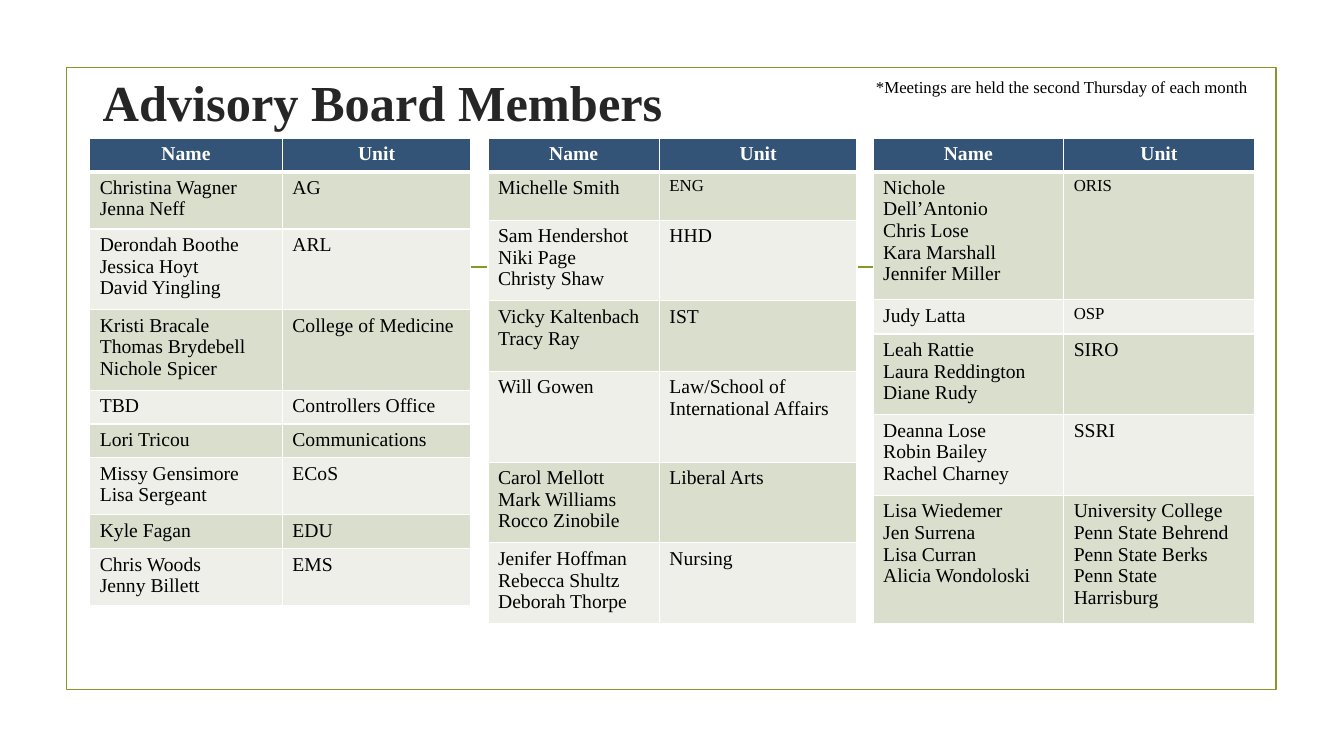
from lxml.etree import SubElement
from pptx import Presentation
from pptx.dml.color import RGBColor
from pptx.enum.shapes import MSO_CONNECTOR, MSO_SHAPE
from pptx.enum.text import MSO_ANCHOR, PP_ALIGN
from pptx.oxml.ns import qn
from pptx.util import Inches, Pt

FONT = "Times New Roman"
GREEN = RGBColor(0x83, 0x99, 0x2A)
NAVY = RGBColor(0x33, 0x54, 0x76)
BANDS = [RGBColor(0xED, 0xEF, 0xE8), RGBColor(0xD9, 0xDE, 0xCD)]
WHITE = RGBColor(0xFF, 0xFF, 0xFF)
BLACK = RGBColor(0, 0, 0)
CHARCOAL = RGBColor(0x26, 0x26, 0x26)

TITLE = "Advisory Board Members"
NOTE = "*Meetings are held the second Thursday of each month"
HEADINGS = (["Name"], ["Unit"])
SMALL_UNITS = {"ENG", "ORIS", "OSP"}
TABLE_TOP = 1.37

# Each member row: height, names, units
TABLES = [
    {"left": 0.89, "cols": (1.91, 1.87), "header": 0.31, "rows": [
        (0.53, ["Christina Wagner", "Jenna Neff"], ["AG"]),
        (0.75, ["Derondah Boothe", "Jessica Hoyt", "David Yingling"], ["ARL"]),
        (0.75, ["Kristi Bracale", "Thomas Brydebell", "Nichole Spicer"],
         ["College of Medicine"]),
        (0.33, ["TBD"], ["Controllers Office"]),
        (0.33, ["Lori Tricou"], ["Communications"]),
        (0.53, ["Missy Gensimore", "Lisa Sergeant"], ["ECoS"]),
        (0.32, ["Kyle Fagan"], ["EDU"]),
        (0.53, ["Chris Woods", "Jenny Billett"], ["EMS"]),
    ]},
    {"left": 4.84, "cols": (1.7, 1.96), "header": 0.31, "rows": [
        (0.48, ["Michelle Smith"], ["ENG"]),
        (0.75, ["Sam Hendershot", "Niki Page", "Christy Shaw"], ["HHD"]),
        (0.7, ["Vicky Kaltenbach", "Tracy Ray"], ["IST"]),
        (0.9, ["Will Gowen"], ["Law/School of International Affairs"]),
        (0.75, ["Carol Mellott", "Mark Williams", "Rocco Zinobile"],
         ["Liberal Arts"]),
        (0.75, ["Jenifer Hoffman", "Rebecca Shultz", "Deborah Thorpe"],
         ["Nursing"]),
    ]},
    {"left": 8.66, "cols": (1.89, 1.89), "header": 0.33, "rows": [
        (1.27, ["Nichole Dell’Antonio", "Chris Lose", "Kara Marshall",
                "Jennifer Miller"], ["ORIS"]),
        (0.34, ["Judy Latta"], ["OSP"]),
        (0.8, ["Leah Rattie", "Laura Reddington", "Diane Rudy"], ["SIRO"]),
        (0.8, ["Deanna Lose", "Robin Bailey", "Rachel Charney"], ["SSRI"]),
        (1.27, ["Lisa Wiedemer", "Jen Surrena", "Lisa Curran",
                "Alicia Wondoloski"],
         ["University College", "Penn State Behrend", "Penn State Berks",
          "Penn State Harrisburg"]),
    ]},
]


def write(tf, lines, size, color, bold=False, align=PP_ALIGN.LEFT):
    for i, line in enumerate(lines):
        p = tf.add_paragraph() if i else tf.paragraphs[0]
        p.alignment = align
        r = p.add_run()
        r.text = line
        r.font.name = FONT
        r.font.size = Pt(size)
        r.font.bold = bold
        r.font.color.rgb = color


def add_text(slide, box, text, size, color, bold=False,
             align=PP_ALIGN.LEFT, anchor=MSO_ANCHOR.TOP):
    tf = slide.shapes.add_textbox(*map(Inches, box)).text_frame
    tf.word_wrap = True
    tf.vertical_anchor = anchor
    write(tf, [text], size, color, bold, align)


def set_borders(cell, row):
    """White borders, thicker between the header and the first row."""
    widths = {"lnL": 1, "lnR": 1, "lnT": 3 if row == 1 else 1,
              "lnB": 3 if row == 0 else 1}
    tcPr = cell._tc.get_or_add_tcPr()
    for side, width in widths.items():
        ln = SubElement(tcPr, qn("a:" + side), w=str(Pt(width)))
        fill = SubElement(ln, qn("a:solidFill"))
        SubElement(fill, qn("a:srgbClr"), val=str(WHITE))


def add_member_table(slide, left, cols, header, rows):
    rows = [(header, *HEADINGS), *rows]
    heights = [row[0] for row in rows]
    box = (left, TABLE_TOP, sum(cols), sum(heights))
    table = slide.shapes.add_table(len(rows), len(cols),
                                   *map(Inches, box)).table
    for column, width in zip(table.columns, cols):
        column.width = Inches(width)
    for i, (height, *cells) in enumerate(rows):
        table.rows[i].height = Inches(height)
        for j, lines in enumerate(cells):
            cell = table.cell(i, j)
            set_borders(cell, i)
            cell.fill.solid()
            cell.fill.fore_color.rgb = BANDS[i % 2] if i else NAVY
            if i:
                size = 12 if lines[0] in SMALL_UNITS else 14
                write(cell.text_frame, lines, size, BLACK)
            else:
                write(cell.text_frame, lines, 14, WHITE, True,
                      PP_ALIGN.CENTER)


def main():
    prs = Presentation()
    prs.slide_width, prs.slide_height = Inches(13.33), Inches(7.5)
    s = prs.slides.add_slide(prs.slide_layouts[6])

    frame = s.shapes.add_shape(MSO_SHAPE.RECTANGLE, Inches(0.66),
                               Inches(0.67), Inches(12), Inches(6.17))
    frame.shadow.inherit = False
    frame.fill.background()
    rule = s.shapes.add_connector(MSO_CONNECTOR.STRAIGHT, Inches(1.53),
                                  Inches(2.65), Inches(11.81), Inches(2.65))
    SubElement(rule._element.spPr, qn("a:effectLst"))
    for sp in (frame, rule):
        sp.line.color.rgb = GREEN
        sp.line.width = Pt(1.25)

    add_text(s, (-1.13, 0.38, 9.85, 1.26), TITLE, 36, CHARCOAL, True,
             PP_ALIGN.CENTER, MSO_ANCHOR.MIDDLE)
    add_text(s, (8.59, 0.71, 5.76, 0.3), NOTE, 12, BLACK)
    for table in TABLES:
        add_member_table(s, **table)
    prs.save("out.pptx")


if __name__ == "__main__":
    main()
